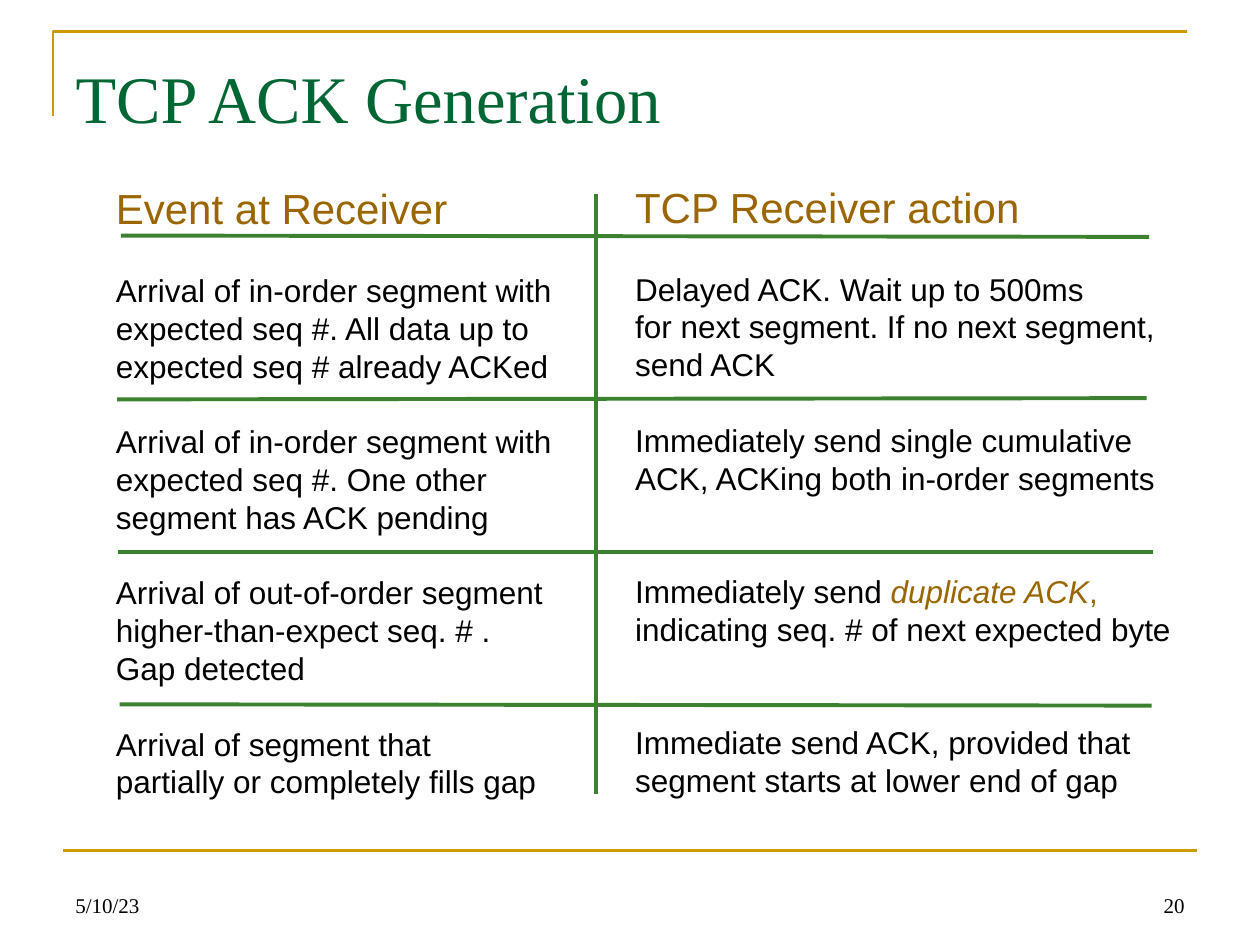
from lxml.etree import SubElement
from pptx import Presentation
from pptx.dml.color import RGBColor
from pptx.enum.shapes import MSO_CONNECTOR
from pptx.enum.text import MSO_ANCHOR, MSO_AUTO_SIZE, PP_ALIGN
from pptx.oxml.ns import qn
from pptx.util import Inches, Pt

SERIF, SANS = "Times New Roman", "Arial"
GOLD, GREEN, RULE, BROWN, BLACK = "CC9900", "006633", "3B812F", "996600", "000000"
LINE_PITCH = 21.6  # points

EVENTS = [
    (1, ["Arrival of in-order segment with",
         "expected seq #. All data up to",
         "expected seq # already ACKed"]),
    (1, ["Arrival of in-order segment with",
         "expected seq #. One other",
         "segment has ACK pending"]),
    (1, ["Arrival of out-of-order segment",
         "higher-than-expect seq. # .",
         "Gap detected"]),
    (1, ["Arrival of segment that",
         "partially or completely fills gap"]),
]
ACTIONS = [
    (1, ["Delayed ACK. Wait up to 500ms",
         "for next segment. If no next segment,",
         "send ACK"]),
    (1, ["Immediately send single cumulative",
         "ACK, ACKing both in-order segments"]),
    (2, [[("Immediately send ", BLACK, False),
          ("duplicate ACK", BROWN, True),
          (",", BROWN, False)],
         "indicating seq. # of next expected byte"]),
    (2, ["Immediate send ACK, provided that",
         "segment starts at lower end of gap"]),
]
ROW_RULES = [
    (0.96, 1.87, 9.12, 1.88),
    (0.93, 3.17, 9.1, 3.16),
    (0.94, 4.38, 9.15, 4.38),
    (0.95, 5.59, 9.14, 5.6),
]
COLUMN_RULE = (4.73, 1.54, 4.73, 6.3)


def color(hex_string):
    return RGBColor.from_string(hex_string)


class SlideBuilder:
    def __init__(self, slide):
        self.slide = slide

    def place(self, shape, left, top, width, height, anchor):
        shape.left, shape.top = Inches(left), Inches(top)
        shape.width, shape.height = Inches(width), Inches(height)
        frame = shape.text_frame
        frame.word_wrap = True
        frame.auto_size = MSO_AUTO_SIZE.NONE
        frame.vertical_anchor = anchor
        return frame

    def run(self, paragraph, text, size, font, hex_color, italic=False):
        run = paragraph.add_run()
        run.text = text
        run.font.size, run.font.name = Pt(size), font
        run.font.italic = italic
        run.font.color.rgb = color(hex_color)

    def title(self, text):
        frame = self.place(self.slide.shapes.title, 0.5, 0.3, 9, 0.94,
                           MSO_ANCHOR.MIDDLE)
        frame.paragraphs[0].alignment = PP_ALIGN.LEFT
        self.run(frame.paragraphs[0], text, 38, SERIF, GREEN)

    def plain(self, paragraph, gap=0):
        """Remove the bullet and indent, and set the space above."""
        properties = paragraph._p.get_or_add_pPr()
        properties.set("marL", "0")
        properties.set("indent", "0")
        SubElement(properties, qn("a:buNone"))
        paragraph.space_before = Pt(gap)

    def column(self, index, left, top, width, heading, groups):
        """Fill a body placeholder with a heading and spaced groups of lines."""
        frame = self.place(self.slide.placeholders[index], left, top, width, 5.2,
                           MSO_ANCHOR.TOP)
        self.plain(frame.paragraphs[0])
        self.run(frame.paragraphs[0], heading, 24, SANS, BROWN)
        for blank_lines, lines in groups:
            for number, line in enumerate(lines):
                paragraph = frame.add_paragraph()
                self.plain(paragraph, 0 if number else blank_lines * LINE_PITCH)
                paragraph.line_spacing = Pt(LINE_PITCH)
                parts = [(line, BLACK, False)] if isinstance(line, str) else line
                for text, hex_color, italic in parts:
                    self.run(paragraph, text, 18, SANS, hex_color, italic)

    def line(self, ends, hex_color, width):
        connector = self.slide.shapes.add_connector(
            MSO_CONNECTOR.STRAIGHT, *[Inches(value) for value in ends])
        connector.line.color.rgb = color(hex_color)
        connector.line.width = Pt(width)
        SubElement(connector._element.spPr, qn("a:effectLst"))

    def corner(self, points, hex_color, width):
        start, *rest = [(Inches(x), Inches(y)) for x, y in points]
        builder = self.slide.shapes.build_freeform(*start)
        builder.add_line_segments(rest, close=False)
        shape = builder.convert_to_shape()
        shape.shadow.inherit = False
        shape.fill.background()
        shape.line.color.rgb = color(hex_color)
        shape.line.width = Pt(width)

    def footer(self, left, text, alignment):
        box = self.slide.shapes.add_textbox(0, 0, 0, 0)
        frame = self.place(box, left, 6.83, 2.33, 0.5, MSO_ANCHOR.BOTTOM)
        frame.paragraphs[0].alignment = alignment
        self.run(frame.paragraphs[0], text, 12, SERIF, BLACK)


def main():
    presentation = Presentation()
    presentation.slide_width, presentation.slide_height = Inches(10), Inches(7.5)
    two_content = presentation.slide_layouts[3]
    builder = SlideBuilder(presentation.slides.add_slide(two_content))

    builder.corner([(0.42, 0.92), (0.42, 0.25), (9.42, 0.25)], GOLD, 1.5)
    builder.line((0.5, 6.75, 9.5, 6.75), GOLD, 1.5)
    builder.title("TCP ACK Generation")
    builder.column(1, 0.82, 1.4, 3.85, "Event at Receiver", EVENTS)
    builder.column(2, 4.94, 1.39, 4.7, "TCP Receiver action", ACTIONS)
    for ends in [*ROW_RULES, COLUMN_RULE]:
        builder.line(ends, RULE, 2.25)
    builder.footer(0.5, "5/10/23", PP_ALIGN.LEFT)
    builder.footer(7.17, "20", PP_ALIGN.RIGHT)

    presentation.save("out.pptx")


if __name__ == "__main__":
    main()
